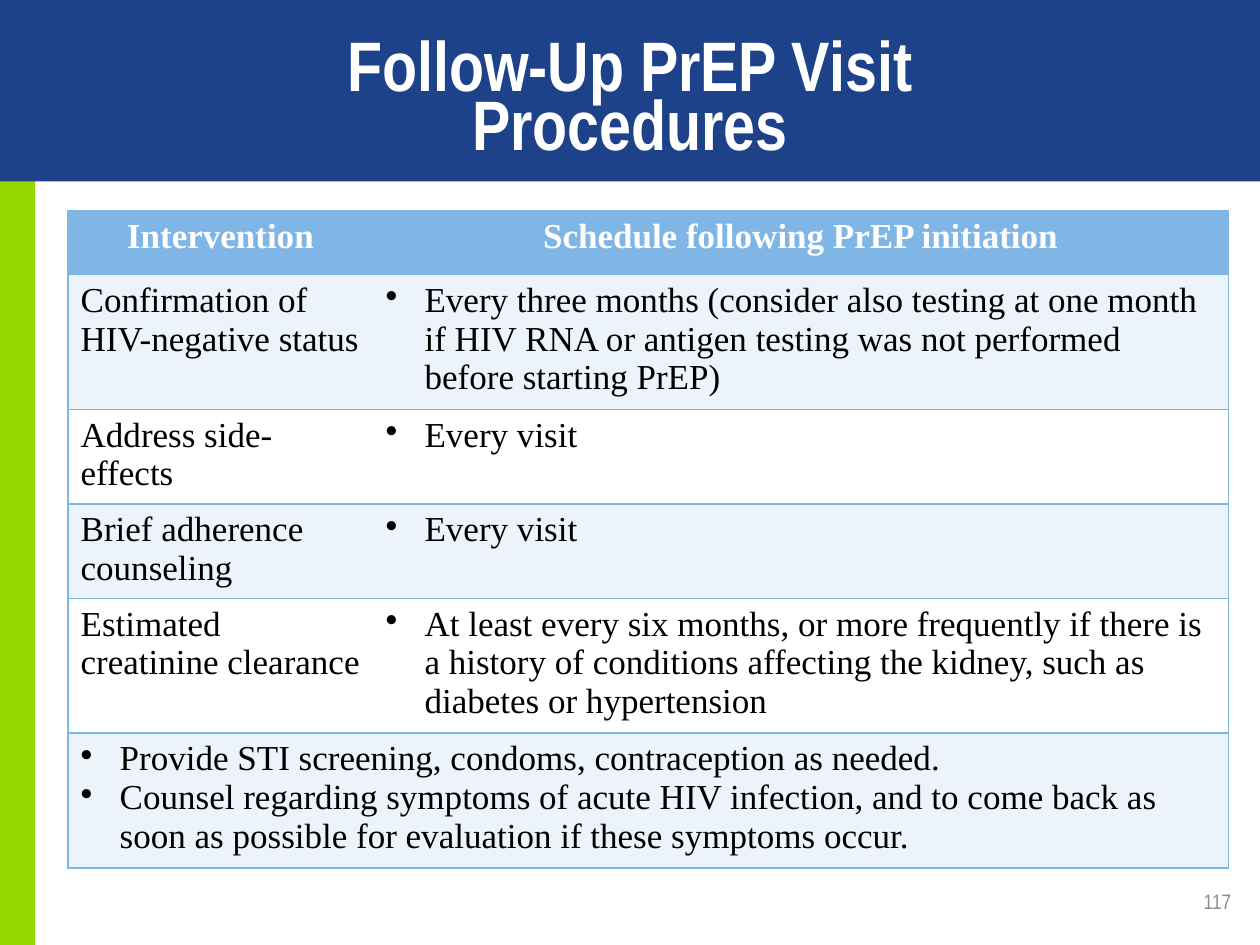
from dataclasses import dataclass

from lxml import etree
from pptx import Presentation
from pptx.dml.color import RGBColor
from pptx.enum.shapes import MSO_SHAPE
from pptx.enum.text import MSO_ANCHOR, MSO_AUTO_SIZE, PP_ALIGN
from pptx.oxml.ns import qn
from pptx.util import Inches, Pt

RECTANGLE = MSO_SHAPE.RECTANGLE
MIDDLE = MSO_ANCHOR.MIDDLE
NO_AUTOFIT = MSO_AUTO_SIZE.NONE
LEFT, CENTER, RIGHT = PP_ALIGN.LEFT, PP_ALIGN.CENTER, PP_ALIGN.RIGHT

TITLE = "Follow-Up PrEP Visit\nProcedures"
PAGE_NUMBER = "117"
HEADERS = ("Intervention", "Schedule following PrEP initiation")
INTERVENTIONS = [
    ("Confirmation of HIV-negative status",
     "Every three months (consider also testing at one month if HIV RNA or "
     "antigen testing was not performed before starting PrEP)"),
    ("Address side-effects", "Every visit"),
    ("Brief adherence counseling", "Every visit"),
    ("Estimated creatinine clearance",
     "At least every six months, or more frequently if there is a history of "
     "conditions affecting the kidney, such as diabetes or hypertension"),
]
GENERAL_ADVICE = [
    "Provide STI screening, condoms, contraception as needed.",
    "Counsel regarding symptoms of acute HIV infection, and to come back as "
    "soon as possible for evaluation if these symptoms occur.",
]
COLUMN_WIDTHS = (2.42, 6.79)
ROW_HEIGHTS = (0.51, 1.07, 0.75, 0.75, 1.07, 1.07)
NO_TABLE_STYLE = "{2D5ABB26-0587-4C30-8999-92F81FD0307C}"


@dataclass(frozen=True)
class Theme:
    heading_font: str = "Arial Narrow"
    body_font: str = "Times New Roman"
    title_size: int = 40
    body_size: int = 20
    number_size: int = 12
    navy: str = "1E428A"
    green: str = "94D600"
    sky: str = "80B6E6"
    band: str = "EDF3FA"
    white: str = "FFFFFF"
    black: str = "000000"
    gray: str = "8C8C8C"


THEME = Theme()


def paint(fill, color):
    fill.solid()
    fill.fore_color.rgb = RGBColor.from_string(color)


def format_paragraph(para, font, size, color, bold=False, align=LEFT):
    para.alignment = align
    para.font.name = font
    para.font.size = Pt(size)
    para.font.bold = bold
    para.font.color.rgb = RGBColor.from_string(color)


def add_bullet(para):
    properties = para._p.get_or_add_pPr()
    properties.set("marL", str(Inches(0.31)))
    properties.set("indent", str(-Inches(0.31)))
    bullet = etree.Element(qn("a:buChar"), char="•")
    properties.insert_element_before(bullet, "a:tabLst", "a:defRPr", "a:extLst")


def add_borders(cell, sides):
    properties = cell._tc.get_or_add_tcPr()
    for position, side in enumerate(sides):
        line = etree.Element(qn(f"a:ln{side}"), w=str(Pt(1)))
        fill = etree.SubElement(line, qn("a:solidFill"))
        etree.SubElement(fill, qn("a:srgbClr"), val=THEME.sky)
        properties.insert(position, line)


def fill_cell(cell, lines, fill, color=THEME.black, bold=False, align=LEFT,
              bulleted=False):
    paint(cell.fill, fill)
    frame = cell.text_frame
    for index, line in enumerate(lines):
        para = frame.add_paragraph() if index else frame.paragraphs[0]
        para.text = line
        format_paragraph(para, THEME.body_font, THEME.body_size, color, bold, align)
        if bulleted:
            add_bullet(para)


def add_bar(page, color, *bounds):
    bar = page.shapes.add_shape(RECTANGLE, *map(Inches, bounds))
    bar.shadow.inherit = False
    paint(bar.fill, color)
    bar.line.fill.background()
    page.shapes.title.element.addprevious(bar.element)


def add_title(page):
    title = page.shapes.title
    title.left, title.top, title.width, title.height = map(
        Inches, (0.5, 0.35, 9, 0.94))
    frame = title.text_frame
    frame.auto_size = NO_AUTOFIT
    frame.vertical_anchor = MIDDLE
    para = frame.paragraphs[0]
    para.text = TITLE
    para.line_spacing = 0.7
    format_paragraph(para, THEME.heading_font, THEME.title_size, THEME.white,
                     True, CENTER)


def add_schedule(page):
    table = page.shapes.add_table(
        len(ROW_HEIGHTS), len(COLUMN_WIDTHS), Inches(0.54), Inches(1.67),
        Inches(sum(COLUMN_WIDTHS)), Inches(sum(ROW_HEIGHTS))).table
    table.horz_banding = False
    table._tbl.tblPr.find(qn("a:tableStyleId")).text = NO_TABLE_STYLE
    for column, width in zip(table.columns, COLUMN_WIDTHS):
        column.width = Inches(width)
    for row, height in zip(table.rows, ROW_HEIGHTS):
        row.height = Inches(height)

    for column, header in enumerate(HEADERS):
        fill_cell(table.cell(0, column), [header], THEME.sky, THEME.white,
                  True, CENTER)
    for row, (intervention, schedule) in enumerate(INTERVENTIONS, start=1):
        fill = THEME.band if row % 2 else THEME.white
        fill_cell(table.cell(row, 0), [intervention], fill)
        fill_cell(table.cell(row, 1), [schedule], fill, bulleted=True)

    last = len(ROW_HEIGHTS) - 1
    advice = table.cell(last, 0)
    advice.merge(table.cell(last, 1))
    fill_cell(advice, GENERAL_ADVICE, THEME.band, bulleted=True)

    for row in range(last):
        add_borders(table.cell(row, 0), "LTB")
        add_borders(table.cell(row, 1), "RTB")
    for column in range(len(COLUMN_WIDTHS)):
        add_borders(table.cell(last, column), "LRTB" if column == 0 else "RTB")


def add_page_number(page):
    box = page.shapes.add_textbox(*map(Inches, (7.54, 6.95, 2.33, 0.4)))
    frame = box.text_frame
    frame.word_wrap = True
    frame.vertical_anchor = MIDDLE
    para = frame.paragraphs[0]
    para.text = PAGE_NUMBER
    format_paragraph(para, THEME.heading_font, THEME.number_size, THEME.gray,
                     align=RIGHT)


def main():
    deck = Presentation()
    deck.slide_width, deck.slide_height = Inches(10), Inches(7.5)
    page = deck.slides.add_slide(deck.slide_layouts.get_by_name("Title Only"))
    add_bar(page, THEME.green, 0, 1.31, 0.28, 6.19)
    add_bar(page, THEME.navy, 0, 0, 10, 1.44)
    add_title(page)
    add_schedule(page)
    add_page_number(page)
    deck.save("out.pptx")


if __name__ == "__main__":
    main()
